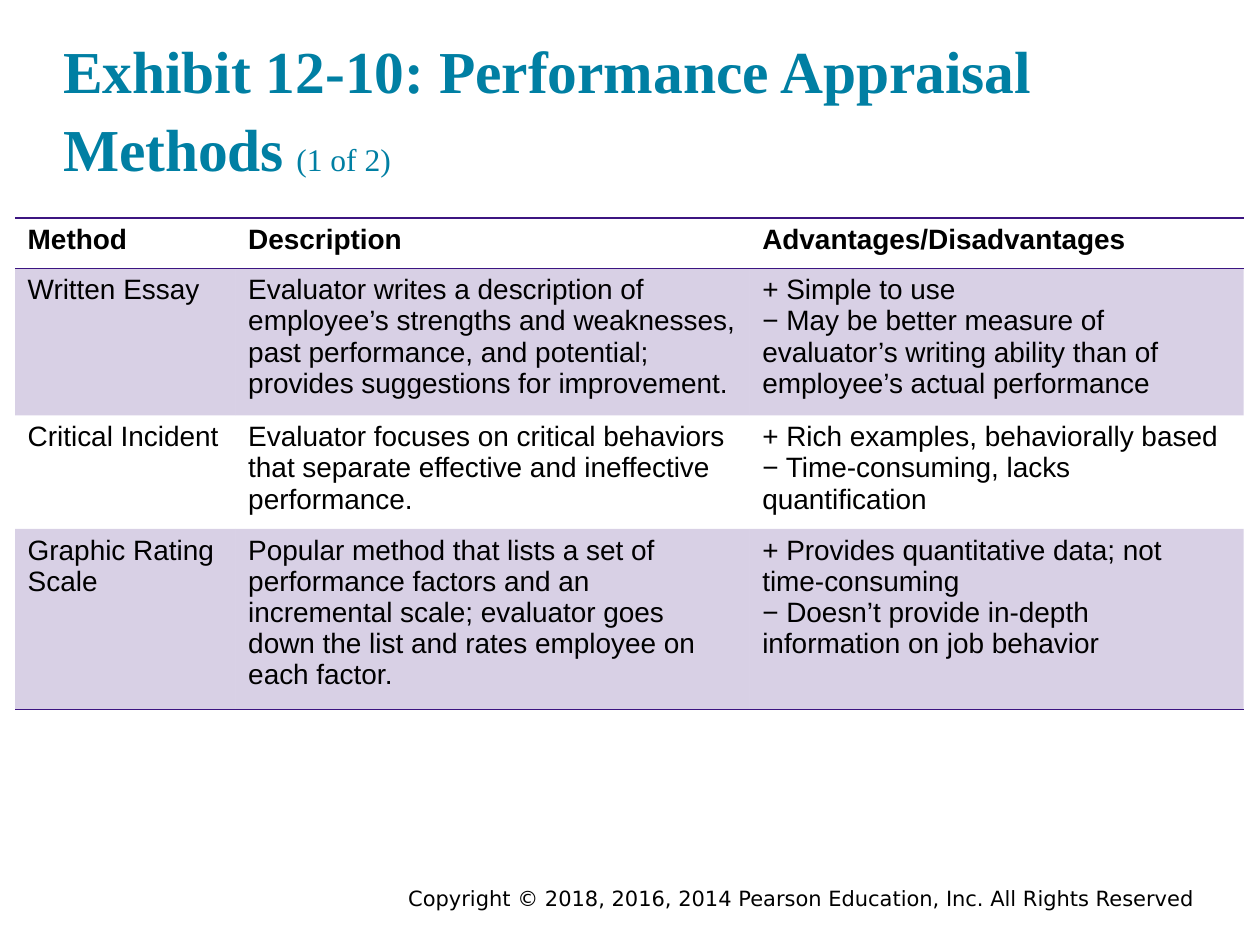
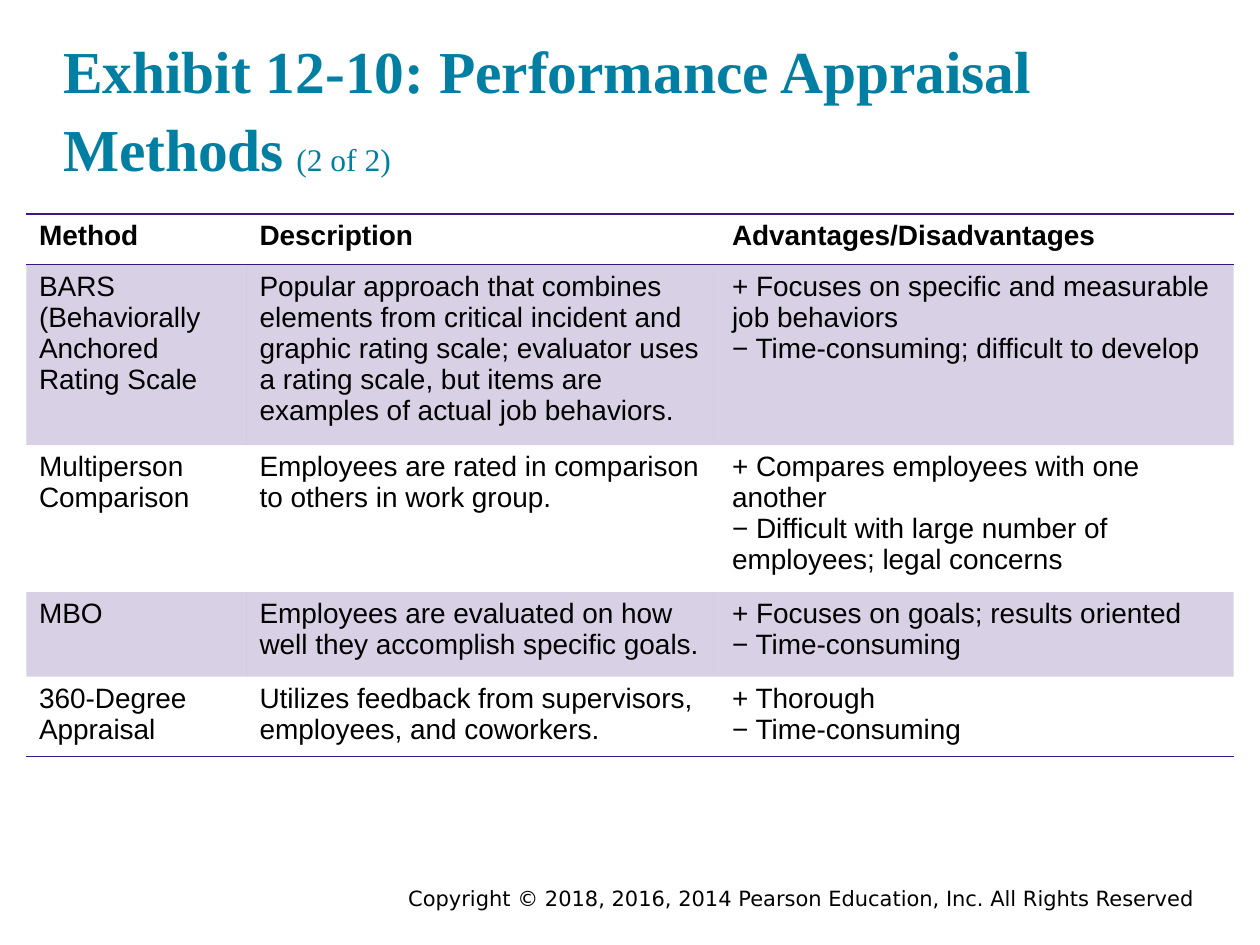
from lxml import etree
from pptx import Presentation
from pptx.dml.color import RGBColor
from pptx.enum.text import MSO_ANCHOR, MSO_AUTO_SIZE, PP_ALIGN
from pptx.oxml import parse_xml
from pptx.oxml.ns import nsdecls, qn
from pptx.util import Inches, Pt

# Content: in cells, \n starts a paragraph and \v breaks a line
HEADING = "Exhibit 12-10: Performance Appraisal Methods"
COPYRIGHT = "Copyright © 2018, 2016, 2014 Pearson Education, Inc. All Rights Reserved"
COLUMN_HEADS = ("Method", "Description", "Advantages/Disadvantages")
EXHIBITS = [
    {
        "left": 0.12, "top": 1.73,
        "column_widths": (1.75, 4.08, 3.92),
        "row_heights": (0.4, 1.09, 0.84, 1.33),
        "methods": [
            ("Written Essay",
             "Evaluator writes a description of employee’s strengths and weaknesses, "
             "past performance, and potential; provides suggestions for improvement.",
             "+ Simple to use\n− May be better measure of evaluator’s writing ability "
             "than of employee’s actual performance"),
            ("Critical Incident",
             "Evaluator focuses on critical behaviors that separate effective and "
             "ineffective performance.",
             "+ Rich examples, behaviorally based\v− Time-consuming, lacks quantification"),
            ("Graphic Rating Scale",
             "Popular method that lists a set of performance factors and an incremental "
             "scale; evaluator goes down the list and rates employee on each factor.",
             "+ Provides quantitative data; not time-consuming\v"
             "− Doesn’t provide in-depth information on job behavior"),
        ],
    },
    {
        "left": 0.21, "top": 1.7,
        "column_widths": (1.75, 3.75, 4.08),
        "row_heights": (0.4, 1.34, 1.09, 0.67, 0.62),
        "methods": [
            ("BARS (Behaviorally Anchored Rating Scale",
             "Popular approach that combines elements from critical incident and graphic "
             "rating scale; evaluator uses a rating scale, but items are examples of "
             "actual job behaviors.",
             "+ Focuses on specific and measurable job behaviors\n"
             "− Time-consuming; difficult to develop"),
            ("Multiperson Comparison",
             "Employees are rated in comparison to others in work group.",
             "+ Compares employees with one another\v"
             "− Difficult with large number of employees; legal concerns"),
            ("MBO",
             "Employees are evaluated on how well they accomplish specific goals.",
             "+ Focuses on goals; results oriented\v− Time-consuming"),
            ("360-Degree Appraisal",
             "Utilizes feedback from supervisors, employees, and coworkers.",
             "+ Thorough\v− Time-consuming"),
        ],
    },
]

# Shared style
TEAL = RGBColor(0x00, 0x7F, 0xA3)
PURPLE = RGBColor(0x3C, 0x15, 0x81)
BLACK = RGBColor(0x00, 0x00, 0x00)
BAND_OPACITY = 20
NO_STYLE_NO_GRID = "{2D5ABB26-0587-4C30-8999-92F81FD0307C}"


def style_font(font, name, size, color, bold=None):
    font.name, font.size, font.bold = name, Pt(size), bold
    font.color.rgb = color


def add_heading(slide, number):
    heading = slide.shapes.title
    heading.left, heading.top = Inches(0.5), Inches(0.25)
    heading.width, heading.height = Inches(9), Inches(1.17)
    frame = heading.text_frame
    frame.margin_left = frame.margin_top = frame.margin_right = frame.margin_bottom = 0
    frame.auto_size, frame.word_wrap = MSO_AUTO_SIZE.NONE, True
    frame.vertical_anchor = MSO_ANCHOR.MIDDLE
    line = frame.paragraphs[0]
    line.alignment, line.line_spacing = PP_ALIGN.LEFT, 1.1
    counter = f"({number} of {len(EXHIBITS)})"
    for text, size, bold in ((HEADING, 34, True), (" ", 28, True), (counter, 18, False)):
        run = line.add_run()
        run.text = text
        style_font(run.font, "Times New Roman", size, TEAL, bold)


def add_copyright(slide):
    notice = slide.shapes.add_textbox(Inches(1.75), Inches(6.98), Inches(7.83), Inches(0.3))
    notice.text_frame.word_wrap = True
    line = notice.text_frame.paragraphs[0]
    line.text, line.alignment = COPYRIGHT, PP_ALIGN.RIGHT
    style_font(line.font, "DejaVu Sans", 12, BLACK)


def add_rule(cell, side):
    cell._tc.get_or_add_tcPr().insert(0, parse_xml(
        f'<a:{side} {nsdecls("a")} w="{Pt(1)}"><a:solidFill>'
        f'<a:srgbClr val="{PURPLE}"/></a:solidFill></a:{side}>'))


def shade(cell):
    cell.fill.solid()
    cell.fill.fore_color.rgb = PURPLE
    tint = cell._tc.tcPr.find(".//" + qn("a:srgbClr"))
    etree.SubElement(tint, qn("a:alpha"), val=str(BAND_OPACITY * 1000))


def add_methods_table(slide, exhibit):
    rows = [COLUMN_HEADS, *exhibit["methods"]]
    widths, heights = exhibit["column_widths"], exhibit["row_heights"]
    frame = slide.shapes.add_table(
        len(rows), len(widths), Inches(exhibit["left"]), Inches(exhibit["top"]),
        Inches(sum(widths)), Inches(sum(heights)))
    table = frame.table
    table.horz_banding = False
    table._tbl.tblPr.find(qn("a:tableStyleId")).text = NO_STYLE_NO_GRID
    for column, width in zip(table.columns, widths):
        column.width = Inches(width)
    for row, height in zip(table.rows, heights):
        row.height = Inches(height)

    for r, texts in enumerate(rows):
        for c, text in enumerate(texts):
            cell = table.cell(r, c)
            cell.text = text
            for paragraph in cell.text_frame.paragraphs:
                style_font(paragraph.font, "Arial", 16, BLACK, r == 0)
            # Odd rows are banded; rules frame the head and close the table
            if r % 2:
                shade(cell)
            else:
                cell.fill.background()
            if r in (0, len(rows) - 1):
                add_rule(cell, "lnB")
            if r == 0:
                add_rule(cell, "lnT")


def main():
    prs = Presentation()
    prs.slide_width, prs.slide_height = Inches(10), Inches(7.5)
    title_only = prs.slide_layouts[5]
    for number, exhibit in enumerate(EXHIBITS, start=1):
        slide = prs.slides.add_slide(title_only)
        add_copyright(slide)
        add_heading(slide, number)
        add_methods_table(slide, exhibit)
    prs.save("out.pptx")


if __name__ == "__main__":
    main()
